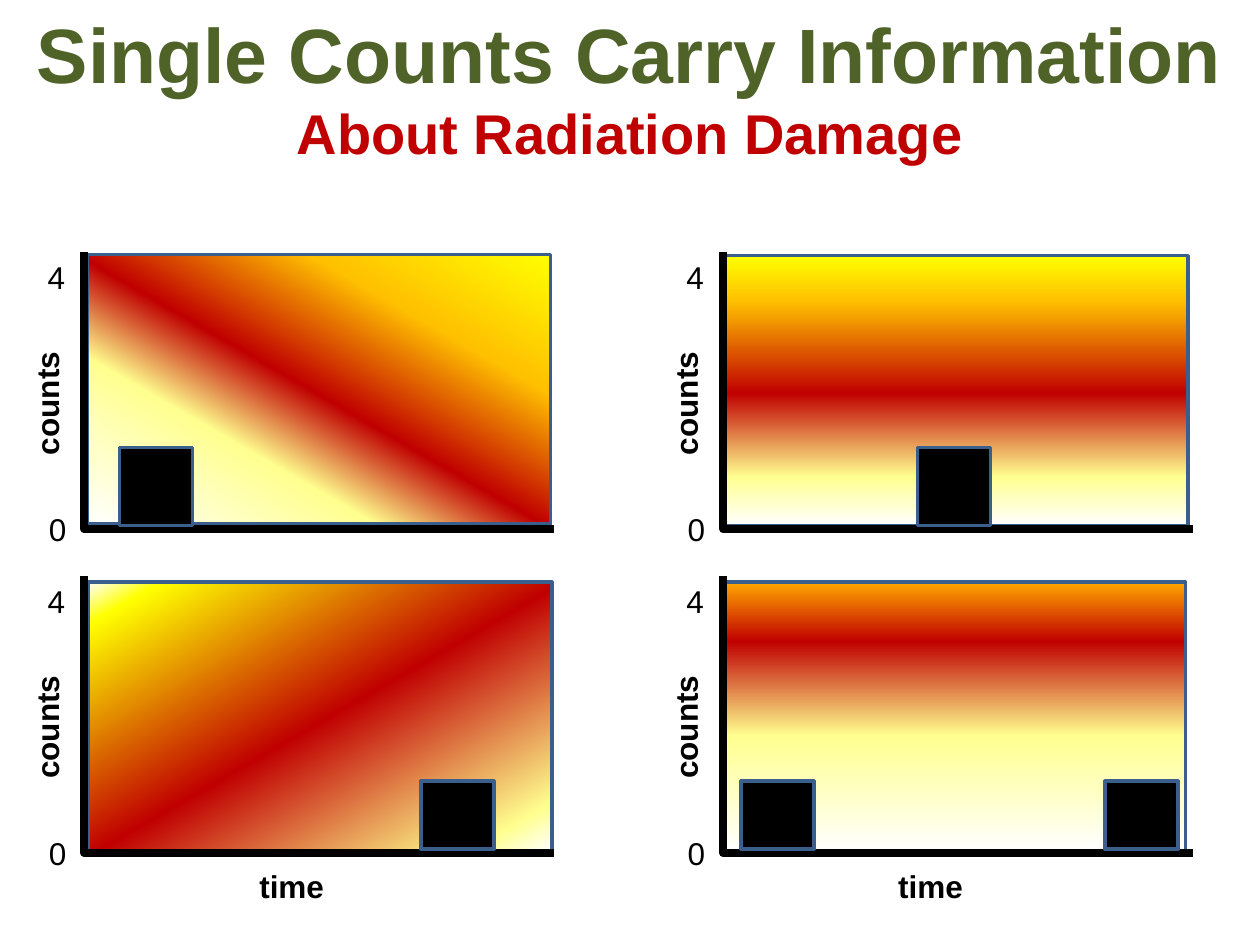
from lxml import etree
from pptx import Presentation
from pptx import util as u
from pptx.dml.color import RGBColor
from pptx.enum import shapes, text
from pptx.oxml.ns import qn

BLACK = RGBColor(0x00, 0x00, 0x00)
WHITE = RGBColor(0xFF, 0xFF, 0xFF)
YELLOW = RGBColor(0xFF, 0xFF, 0x00)
PALE = RGBColor(0xFF, 0xFF, 0x8F)
AMBER = RGBColor(0xFF, 0xC0, 0x00)
ORANGE = RGBColor(0xFF, 0xA7, 0x00)
RED = RGBColor(0xC0, 0x00, 0x00)
GREEN = RGBColor(0x4F, 0x62, 0x28)
BLUE = RGBColor(0x3A, 0x5F, 0x8C)

# The slide is a grid of 100 columns by 75 rows
COLUMNS, ROWS = 100, 75
CELL = u.Inches(0.1)
AXIS_WIDTH, AXIS_HEIGHT = 37.3, 22


def cells(*lengths):
    return [round(length * CELL) for length in lengths]


class SlideBuilder:
    """Holds the style and the slide being drawn."""
    font = "Arial"
    label_size = 18

    def __init__(self, slide):
        self.slide = slide

    def rectangle(self, left, top, width, height):
        shape = self.slide.shapes.add_shape(
            shapes.MSO_SHAPE.RECTANGLE, *cells(left, top, width, height))
        shape.shadow.inherit = False
        shape.line.color.rgb = BLUE
        shape.line.width = u.Pt(2)
        return shape

    def block(self, left, top, height):
        shape = self.rectangle(left, top, 5.8, height)
        shape.fill.solid()
        shape.fill.fore_color.rgb = BLACK

    def gradient(self, left, top, stops, angle):
        shape = self.rectangle(left, top, 36.8, 21.4)
        shape.fill.gradient()
        fill = shape._element.spPr.find(qn("a:gradFill"))
        for child in list(fill):
            fill.remove(child)
        stop_list = etree.SubElement(fill, qn("a:gsLst"))
        for percent, color in stops:
            stop = etree.SubElement(stop_list, qn("a:gs"), pos=str(percent * 1000))
            etree.SubElement(stop, qn("a:srgbClr"), val=str(color))
        etree.SubElement(fill, qn("a:lin"), ang=str(angle * 60000), scaled="0")

    def axes(self, left, top):
        bottom = top + AXIS_HEIGHT
        builder = self.slide.shapes.build_freeform(*cells(left + AXIS_WIDTH, bottom))
        builder.add_line_segments([cells(left, bottom), cells(left, top)], close=False)
        shape = builder.convert_to_shape()
        shape.shadow.inherit = False
        shape.fill.background()
        shape.line.color.rgb = BLACK
        shape.line.width = u.Pt(4.5)
        etree.SubElement(shape.line._get_or_add_ln(), qn("a:round"))

    def text(self, box, lines, bold=False, wrap=True, rotation=0, align=None):
        shape = self.slide.shapes.add_textbox(*cells(*box))
        shape.rotation = rotation
        frame = shape.text_frame
        frame.word_wrap = wrap
        frame.auto_size = text.MSO_AUTO_SIZE.SHAPE_TO_FIT_TEXT
        for index, (wording, size, color) in enumerate(lines):
            paragraph = frame.add_paragraph() if index else frame.paragraphs[0]
            paragraph.alignment = align
            run = paragraph.add_run()
            run.text = wording
            run.font.name = self.font
            run.font.size = u.Pt(size)
            run.font.bold = bold
            run.font.color.rgb = color

    def label(self, wording, left, top, width, **style):
        self.text((left, top, width, 4), [(wording, self.label_size, BLACK)], **style)

    def panel(self, left, top, inset, stops, angle, blocks, block_top, time):
        """One plot; block positions are measured from the axis corner."""
        self.gradient(left + inset[0], top + inset[1], stops, angle)
        self.axes(left, top)
        self.label("counts", left - 11.2, top + 6.9, 16.4, bold=True, rotation=270)
        self.label("0", left - 3.8, top + 20, 3.4, wrap=False)
        self.label("4", left - 3.9, top, 3.4, wrap=False)
        if time:
            self.label("time", left + 12.9, top + 22.6, 16.4, bold=True)
        for offset in blocks:
            self.block(left + offset, top + block_top, 21.7 - block_top)


# Inset of the fill, gradient stops, angle and block offsets, row by row
PANELS = [
    [((0.2, 0.2), [(0, YELLOW), (26, AMBER), (51, RED), (69, PALE), (100, WHITE)],
      120, [2.8]),
     ((0.1, 0.3), [(0, YELLOW), (17, AMBER), (51, RED), (82, PALE), (100, WHITE)],
      90, [15.4 + 0.7 * 0])],
    [((0.3, 0.5), [(0, WHITE), (8, YELLOW), (51, RED), (91, PALE), (100, WHITE)],
      60, [26.7]),
     ((-0.1, 0.5), [(0, ORANGE), (22, RED), (57, PALE), (100, WHITE)],
      90, [1.4, 30.3])],
]
PANEL_LEFTS = [6.7, 57.4]
PANEL_TOPS = [20, 45.7]
BLOCK_TOPS = [15.5, 16.3]


def main():
    presentation = Presentation()
    presentation.slide_width, presentation.slide_height = cells(COLUMNS, ROWS)
    builder = SlideBuilder(
        presentation.slides.add_slide(presentation.slide_layouts[6]))

    # Four plots in two rows; only the bottom row names the time axis
    for row, panels in enumerate(PANELS):
        for column, (inset, stops, angle, blocks) in enumerate(panels):
            builder.panel(PANEL_LEFTS[column], PANEL_TOPS[row], inset, stops, angle,
                          blocks, BLOCK_TOPS[row], time=row == len(PANELS) - 1)

    # Title and subtitle
    builder.text((1.5, 0, 97, 13.8),
                 [("Single Counts Carry Information", 44, GREEN),
                  ("About Radiation Damage", 32, RED)],
                 bold=True, wrap=False, align=text.PP_ALIGN.CENTER)
    presentation.save("out.pptx")


if __name__ == "__main__":
    main()
